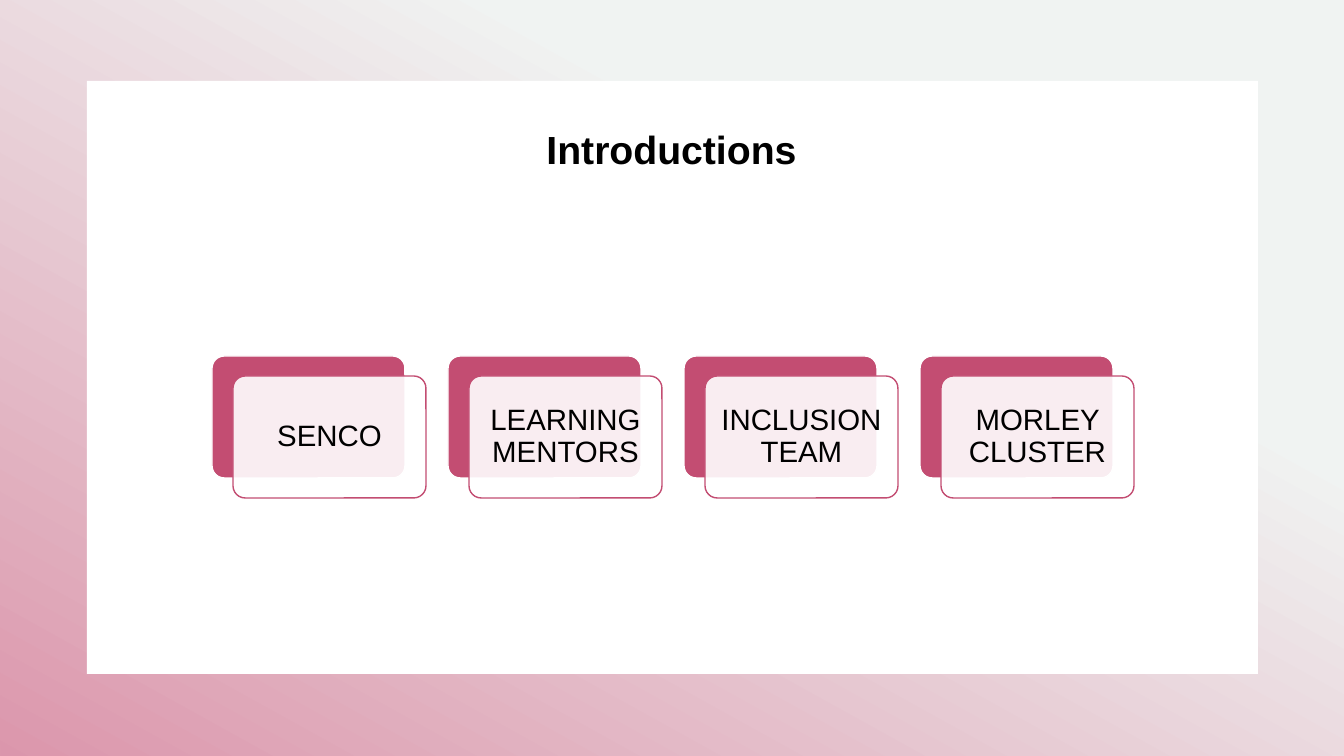
from lxml.etree import SubElement
from pptx import Presentation
from pptx.dml.color import RGBColor
from pptx.enum.shapes import MSO_SHAPE
from pptx.enum.text import MSO_ANCHOR, PP_ALIGN
from pptx.oxml.ns import qn
from pptx.util import Emu, Pt

EMU_PER_PX = 914400 / 100.8

WHITE = RGBColor(0xFF, 0xFF, 0xFF)
BLACK = RGBColor(0x00, 0x00, 0x00)
ROSE = RGBColor(0xC3, 0x4D, 0x72)
PALE_GREY = RGBColor(0xF0, 0xF3, 0xF2)
PINK = RGBColor(0xDB, 0x94, 0xAA)

TEAMS = ["SENCO", "LEARNING MENTORS", "INCLUSION TEAM", "MORLEY CLUSTER"]
CARD_LEFT, CARD_TOP, CARD_STEP = 212, 356, 236
CARD_WIDTH, CARD_HEIGHT = 193, 122
FRONT_OFFSET = 21
LABEL_INSET = 3


def px(length):
    return Emu(round(length * EMU_PER_PX))


def add_box(slide, box, color=None, kind=MSO_SHAPE.RECTANGLE, line=None, opacity=None):
    shape = slide.shapes.add_shape(kind, *map(px, box))
    shape.shadow.inherit = False
    if color is not None:
        shape.fill.solid()
        shape.fill.fore_color.rgb = color
    if opacity is not None:
        color_element = shape.fill._xPr.find(qn("a:solidFill"))[0]
        SubElement(color_element, qn("a:alpha"), val=str(opacity * 1000))
    if line is None:
        shape.line.fill.background()
    else:
        shape.line.color.rgb = line
        shape.line.width = Pt(1)
    return shape


def add_text(slide, box, text, size, bold=False, anchor=MSO_ANCHOR.TOP, inset=9):
    frame = slide.shapes.add_textbox(*map(px, box)).text_frame
    frame.word_wrap = True
    frame.vertical_anchor = anchor
    frame.margin_left = frame.margin_right = px(inset)
    frame.margin_top = frame.margin_bottom = px(min(inset, 9))
    paragraph = frame.paragraphs[0]
    paragraph.alignment = PP_ALIGN.CENTER
    paragraph.line_spacing = 0.9
    run = paragraph.add_run()
    run.text = text
    run.font.name = "Arial"
    run.font.size = Pt(size)
    run.font.bold = bold
    run.font.color.rgb = BLACK


def add_gradient_backdrop(slide):
    backdrop = add_box(slide, (-6, -12, 1357, 779))
    backdrop.rotation = 359
    backdrop.fill.gradient()
    backdrop.fill.gradient_angle = 240
    stops = zip(backdrop.fill.gradient_stops, [(0.32, PALE_GREY), (1, PINK)])
    for stop, (position, color) in stops:
        stop.position = position
        stop.color.rgb = color


def add_card(slide, left, top, text):
    front_left, front_top = left + FRONT_OFFSET, top + FRONT_OFFSET - 1
    back = add_box(slide, (left, top, CARD_WIDTH, CARD_HEIGHT), ROSE,
                   kind=MSO_SHAPE.ROUNDED_RECTANGLE, line=WHITE)
    front = add_box(slide, (front_left, front_top, CARD_WIDTH, CARD_HEIGHT), WHITE,
                    kind=MSO_SHAPE.ROUNDED_RECTANGLE, line=ROSE, opacity=90)
    for shape in (back, front):
        shape.adjustments[0] = 0.1
    label_box = (front_left + LABEL_INSET, front_top + LABEL_INSET,
                 CARD_WIDTH - 2 * LABEL_INSET, CARD_HEIGHT - 2 * LABEL_INSET)
    add_text(slide, label_box, text, size=21, anchor=MSO_ANCHOR.MIDDLE)


def main():
    presentation = Presentation()
    presentation.slide_width, presentation.slide_height = px(1344), px(756)
    slide = presentation.slides.add_slide(presentation.slide_layouts[6])

    # Backdrop and white panel
    add_gradient_backdrop(slide)
    add_box(slide, (87, 81, 1171, 593), WHITE)

    # Title
    add_text(slide, (235, 126, 873, 63), "Introductions", size=28, bold=True, inset=5)

    # Row of team cards
    for index, team in enumerate(TEAMS):
        add_card(slide, CARD_LEFT + index * CARD_STEP, CARD_TOP, team)

    presentation.save("out.pptx")


if __name__ == "__main__":
    main()
